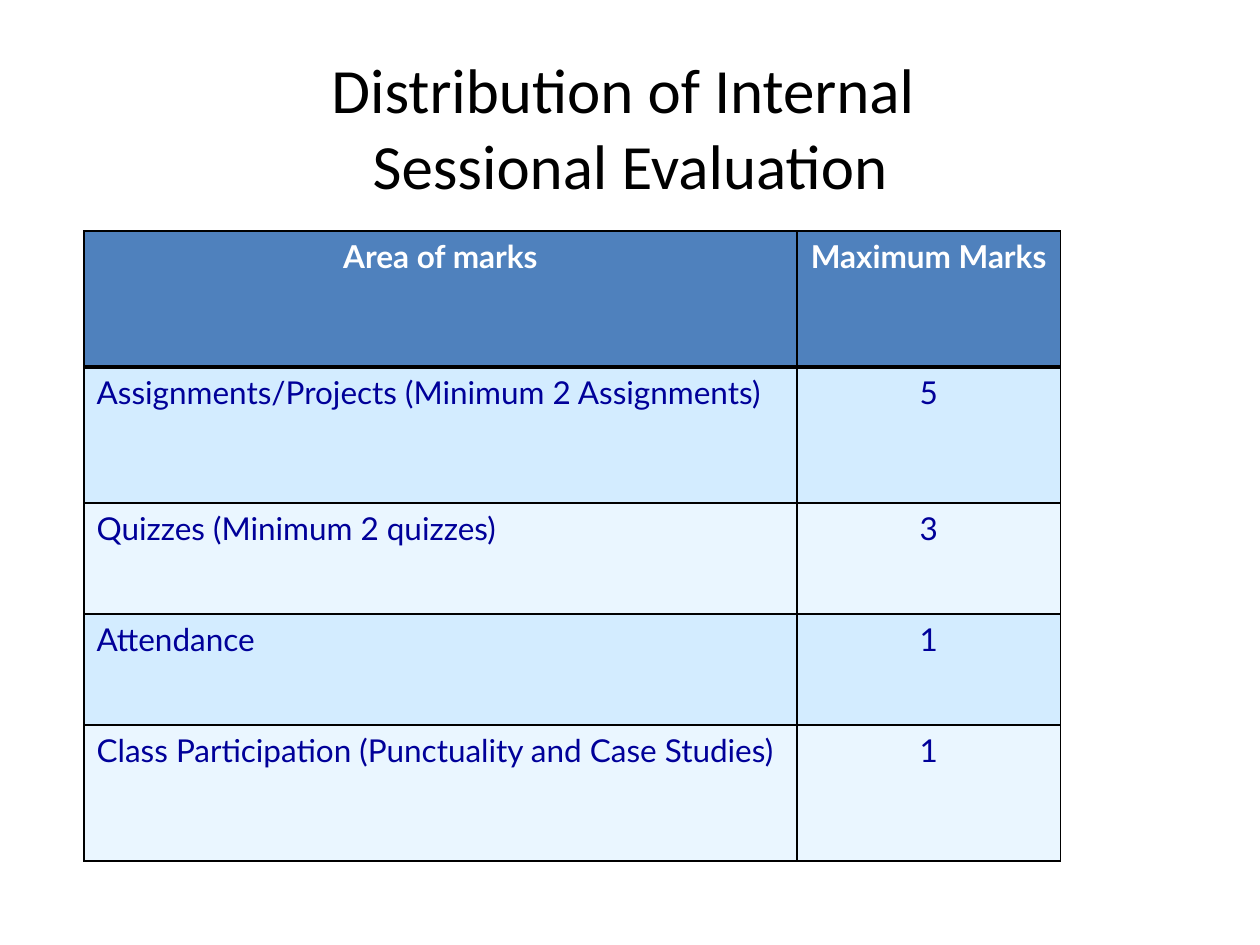
from lxml import etree
from pptx import Presentation
from pptx.dml.color import RGBColor
from pptx.enum.text import MSO_ANCHOR, PP_ALIGN
from pptx.oxml.ns import qn
from pptx.util import Pt

CENTER, LEFT = PP_ALIGN.CENTER, PP_ALIGN.LEFT
MIDDLE = MSO_ANCHOR.MIDDLE

BLACK = RGBColor(0x00, 0x00, 0x00)
WHITE = RGBColor(0xFF, 0xFF, 0xFF)
NAVY = RGBColor(0x00, 0x00, 0x99)
HEADER_BLUE = RGBColor(0x4F, 0x81, 0xBD)
BANDS = (RGBColor(0xD3, 0xEC, 0xFF), RGBColor(0xEA, 0xF6, 0xFF))

TITLE_LINES = ("Distribution of Internal ", "Sessional Evaluation")
MARKS = (
    ("Area of marks", "Maximum Marks"),
    ("Assignments/Projects (Minimum 2 Assignments)", "5"),
    ("Quizzes (Minimum 2 quizzes)", "3"),
    ("Attendance", "1"),
    ("Class Participation (Punctuality and Case Studies)", "1"),
)
COLUMN_SHARES = (0.73, 0.27)
ROW_SHARES = (0.216, 0.216, 0.176, 0.176, 0.216)


def add_run(p, text, font, size, color, bold=False):
    r = p.add_run()
    r.text = text
    r.font.name = font
    r.font.size = Pt(size)
    r.font.bold = bold
    r.font.color.rgb = color


def set_borders(cell, **widths):
    """Draw black cell borders; widths in points, keyed L, R, T, B in that order."""
    tcPr = cell._tc.get_or_add_tcPr()
    for index, (side, width) in enumerate(widths.items()):
        ln = etree.Element(qn(f"a:ln{side}"), w=str(Pt(width)))
        fill = etree.SubElement(ln, qn("a:solidFill"))
        etree.SubElement(fill, qn("a:srgbClr"), val=str(BLACK))
        tcPr.insert(index, ln)


def place_title(s, left, top, width, height):
    sp = s.shapes.title
    sp.left, sp.top, sp.width, sp.height = map(Pt, (left, top, width, height))
    tf = sp.text_frame
    tf.word_wrap = True
    tf.vertical_anchor = MIDDLE
    p = tf.paragraphs[0]
    p.alignment = CENTER
    for i, line in enumerate(TITLE_LINES):
        if i:
            p.add_line_break()
        add_run(p, line, "Calibri", 36, BLACK)


def place_marks_table(s, left, top, width, height):
    table = s.shapes.add_table(
        len(MARKS), len(COLUMN_SHARES), *map(Pt, (left, top, width, height))
    ).table
    for column, share in zip(table.columns, COLUMN_SHARES):
        column.width = Pt(width * share)
    for row, share in zip(table.rows, ROW_SHARES):
        row.height = Pt(height * share)

    for i, texts in enumerate(MARKS):
        header = i == 0
        for j, text in enumerate(texts):
            cell = table.cell(i, j)
            cell.fill.solid()
            cell.fill.fore_color.rgb = HEADER_BLUE if header else BANDS[(i - 1) % 2]
            set_borders(cell, L=1, R=1, T=3 if i == 1 else 1, B=3 if header else 1)
            p = cell.text_frame.paragraphs[0]
            p.alignment = CENTER if header or j else LEFT
            add_run(p, text, "Lato", 18, WHITE if header else NAVY, header)


def main():
    prs = Presentation()
    prs.slide_width, prs.slide_height = Pt(720), Pt(540)
    s = prs.slides.add_slide(prs.slide_layouts[5])
    place_title(s, 24, 18, 672, 108)
    place_marks_table(s, 48, 132, 558, 360)
    prs.save("out.pptx")


if __name__ == "__main__":
    main()
